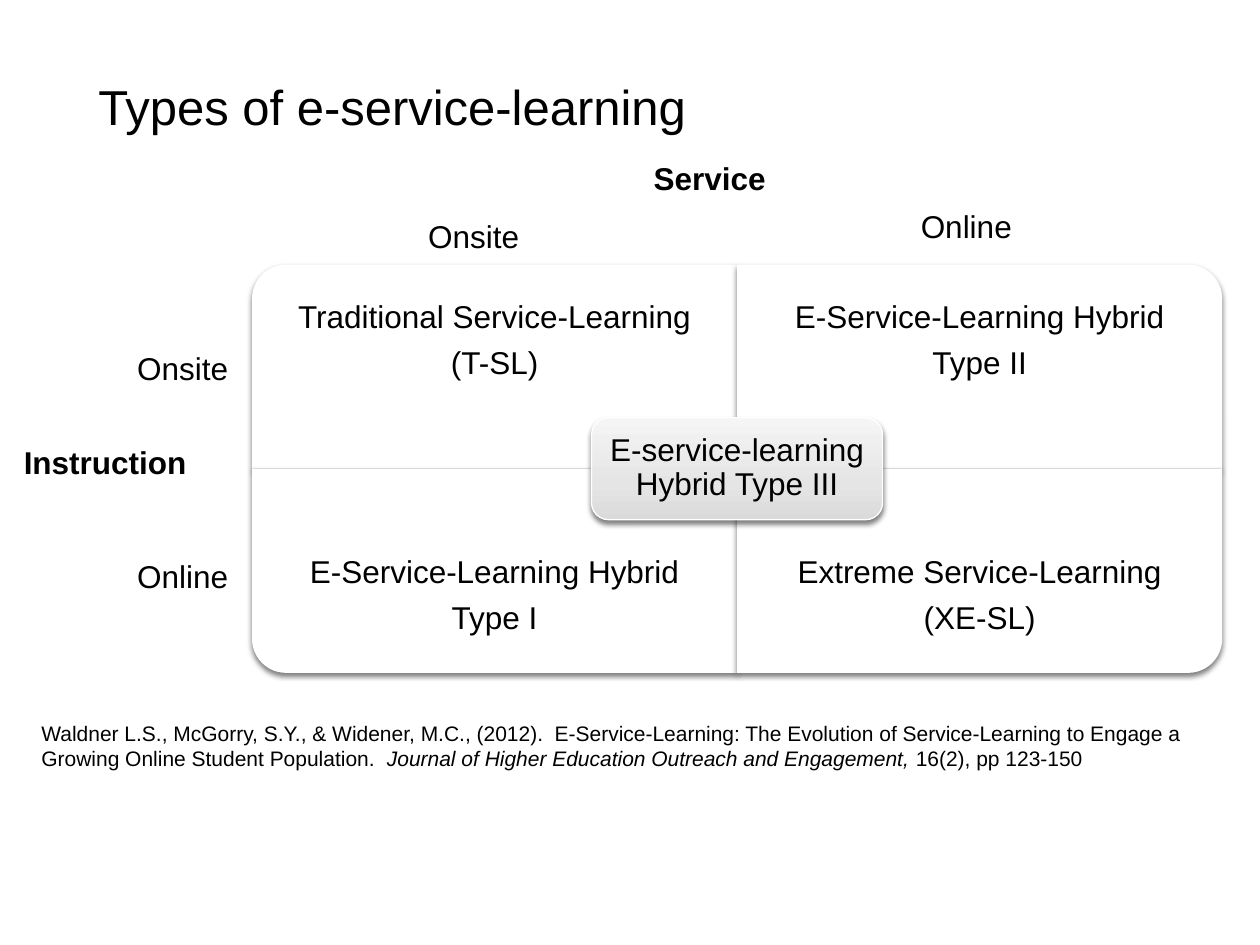
"""Build the slide on types of e-service-learning."""
from copy import deepcopy
from dataclasses import dataclass

from lxml.etree import SubElement
from pptx import Presentation
from pptx.dml.color import RGBColor
from pptx.enum.shapes import MSO_SHAPE
from pptx.enum.text import MSO_ANCHOR, MSO_AUTO_SIZE, PP_ALIGN
from pptx.oxml.ns import qn
from pptx.util import Inches, Pt


@dataclass(frozen=True)
class Theme:
    font: str = "Arial"
    ink: str = "000000"
    paper: str = "FFFFFF"
    hub: tuple = ((0, "DADADA"), (0.35, "E5E5E5"), (1, "F5F5F5"))
    title: int = 28
    body: int = 18
    source: int = 12


theme = Theme()


def write(sp, text, size=theme.body, bold=False, align=PP_ALIGN.LEFT,
          anchor=MSO_ANCHOR.TOP, inset=None, spacing=None, after=None,
          wrap=True, grow=False, italic=None):
    tf = sp.text_frame
    tf.text = text
    tf.word_wrap = wrap
    tf.vertical_anchor = anchor
    tf.auto_size = MSO_AUTO_SIZE.SHAPE_TO_FIT_TEXT if grow else MSO_AUTO_SIZE.NONE
    if inset is not None:
        tf.margin_left = tf.margin_right = Inches(inset)
        tf.margin_top = tf.margin_bottom = Inches(inset)
    if italic:
        before, rest = text.split(italic)
        p = tf.paragraphs[0]
        p.runs[0].text = before
        p.add_run().text = italic
        p.add_run().text = rest
    for p in tf.paragraphs:
        p.alignment = align
        if spacing:
            p.line_spacing = spacing
        if after:
            p.space_after = Pt(after)
        for r in p.runs:
            r.font.name = theme.font
            r.font.size = Pt(size)
            r.font.bold = bold
            r.font.italic = r.text == italic
            r.font.color.rgb = RGBColor.from_string(theme.ink)


def add_shadow(sp):
    sp.shadow.inherit = False
    effects = sp._element.spPr.find(qn("a:effectLst"))
    shadow = SubElement(effects, qn("a:outerShdw"), blurRad=str(Pt(3)),
                        dist=str(Pt(2)), dir="5400000", rotWithShape="0")
    color = SubElement(shadow, qn("a:srgbClr"), val=theme.ink)
    SubElement(color, qn("a:alpha"), val="50000")


prs = Presentation()
prs.slide_width, prs.slide_height = Inches(10), Inches(7.5)
s = prs.slides.add_slide(prs.slide_layouts[5])

title = s.shapes.title
title.left, title.top = Inches(0.68), Inches(0.56)
title.width, title.height = Inches(8.82), Inches(0.67)
write(title, "Types of e-service-learning", size=theme.title)

left, top, cell_w, cell_h, text_h = 2, 2.1, 3.85, 1.62, 1.22
quadrants = [
    (0, 0, 270, "Traditional Service-Learning\n(T-SL)"),
    (0, 1, 0, "E-Service-Learning Hybrid\nType II"),
    (1, 0, 180, "E-Service-Learning Hybrid\nType I"),
    (1, 1, 90, "Extreme Service-Learning\n(XE-SL)"),
]
for row, col, angle, text in quadrants:
    x, y = left + col * cell_w, top + row * cell_h
    w, h = (cell_h, cell_w) if angle % 180 else (cell_w, cell_h)
    sp = s.shapes.add_shape(
        MSO_SHAPE.ROUND_1_RECTANGLE,
        Inches(x + (cell_w - w) / 2), Inches(y + (cell_h - h) / 2), Inches(w), Inches(h))
    sp.rotation = angle
    sp.fill.solid()
    sp.fill.fore_color.rgb = RGBColor.from_string(theme.paper)
    sp.line.fill.background()
    add_shadow(sp)
    box = s.shapes.add_textbox(Inches(x), Inches(y + row * (cell_h - text_h)),
                               Inches(cell_w), Inches(text_h))
    write(box, text, align=PP_ALIGN.CENTER, anchor=MSO_ANCHOR.MIDDLE,
          inset=0.14, spacing=0.9, after=7)

hub_w, hub_h = 2.31, 0.81
hub = s.shapes.add_shape(
    MSO_SHAPE.ROUNDED_RECTANGLE, Inches(left + cell_w - hub_w / 2),
    Inches(top + cell_h - hub_h / 2), Inches(hub_w), Inches(hub_h))
hub.fill.gradient()
hub.fill.gradient_angle = 90
stops = hub._element.spPr.find(qn("a:gradFill")).find(qn("a:gsLst"))
stops.append(deepcopy(stops[0]))
for stop, (position, color) in zip(hub.fill.gradient_stops, theme.hub):
    stop.position = position
    stop.color.rgb = RGBColor.from_string(color)
hub.line.color.rgb = RGBColor.from_string(theme.paper)
hub.line.width = Pt(0.75)
add_shadow(hub)
write(hub, "E-service-learning Hybrid Type III", align=PP_ALIGN.CENTER,
      anchor=MSO_ANCHOR.MIDDLE, inset=0.07, spacing=0.9)

labels = [
    ("Onsite", 3.3, 1.67, 0.93, False),
    ("Online", 7.21, 1.59, 0.93, False),
    ("Onsite", 0.99, 2.72, 0.93, False),
    ("Online", 0.99, 4.37, 0.93, False),
    ("Instruction", 0.09, 3.47, 1.51, True),
    ("Service", 5.09, 1.21, 1.1, True),
]
for text, x, y, w, bold in labels:
    box = s.shapes.add_textbox(Inches(x), Inches(y), Inches(w), Inches(0.4))
    write(box, text, bold=bold, wrap=False, grow=True)

source = s.shapes.add_textbox(Inches(0.23), Inches(5.67), Inches(9.59), Inches(0.5))
write(source,
      "Waldner L.S., McGorry, S.Y., & Widener, M.C., (2012).  E-Service-Learning: "
      "The Evolution of Service-Learning to Engage a Growing Online Student Population.  "
      "Journal of Higher Education Outreach and Engagement, 16(2), pp 123-150",
      size=theme.source, grow=True,
      italic="Journal of Higher Education Outreach and Engagement, ")

prs.save("out.pptx")
